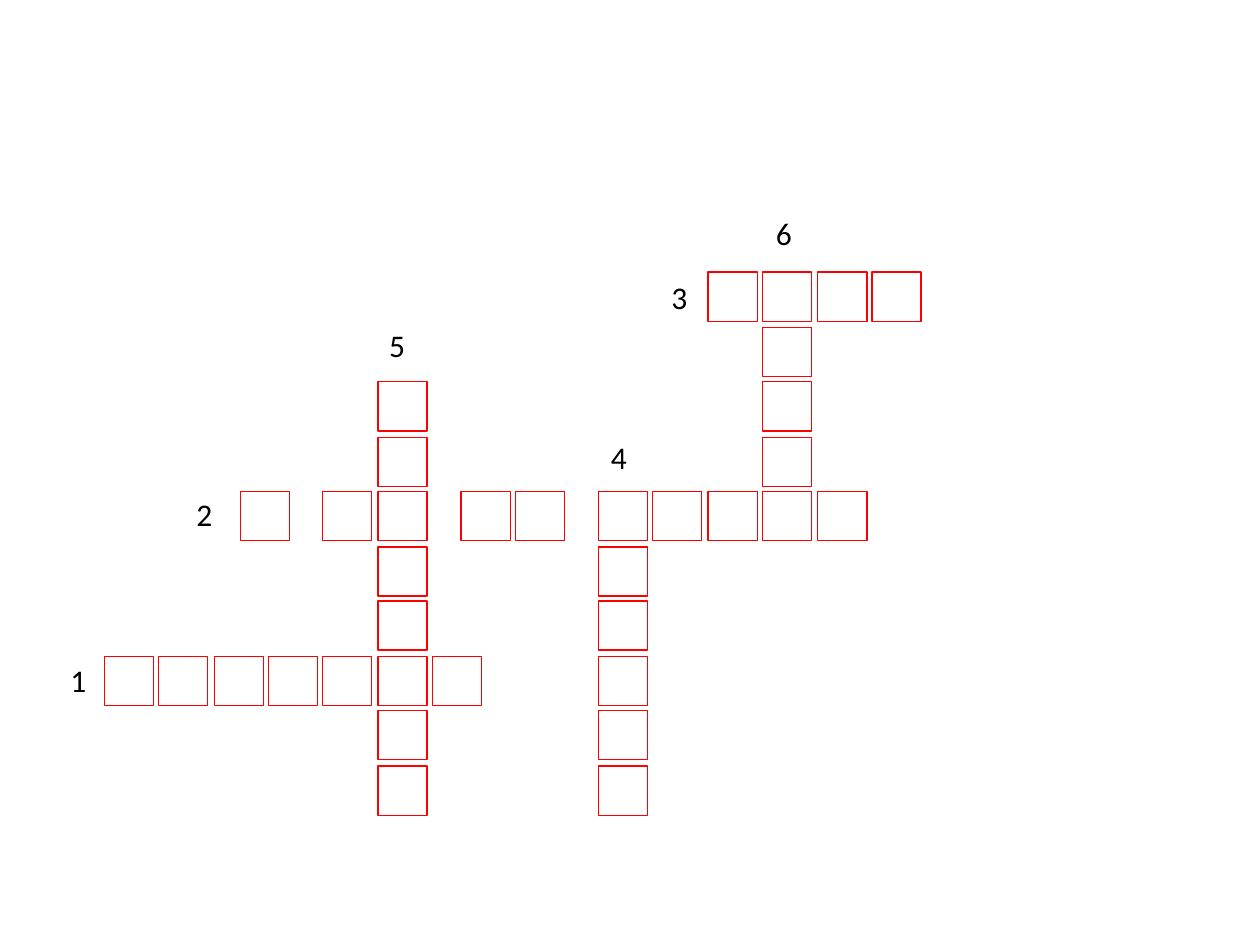
from itertools import product

from pptx import Presentation
from pptx.dml.color import RGBColor
from pptx.enum.shapes import MSO_SHAPE
from pptx.enum.text import MSO_AUTO_SIZE
from pptx.util import Inches, Pt

CELL = 0.39


def color(value):
    return RGBColor.from_string(value)


def spread(first, last, count):
    """Return evenly spaced positions from first to last."""
    step = (last - first) / (count - 1)
    return [round(first + i * step, 2) for i in range(count)]


class Crossword:
    font = "Calibri"
    size = 18
    ink = "000000"
    border = "FF0000"

    def __init__(self, slide):
        self.slide = slide

    def cell(self, x, y):
        sp = self.slide.shapes.add_shape(
            MSO_SHAPE.RECTANGLE, Inches(x), Inches(y), Inches(CELL), Inches(CELL))
        sp.shadow.inherit = False
        sp.fill.background()
        sp.line.color.rgb = color(self.border)
        sp.line.width = Pt(0.75)

    def number(self, text, x, y):
        box = self.slide.shapes.add_textbox(
            Inches(x), Inches(y), Inches(CELL), Inches(0.4))
        tf = box.text_frame
        tf.word_wrap = True
        tf.auto_size = MSO_AUTO_SIZE.SHAPE_TO_FIT_TEXT
        r = tf.paragraphs[0].add_run()
        r.text = text
        r.font.name = self.font
        r.font.size = Pt(self.size)
        r.font.color.rgb = color(self.ink)


def main():
    prs = Presentation()
    prs.slide_width, prs.slide_height = Inches(10), Inches(7.5)
    puzzle = Crossword(prs.slides.add_slide(prs.slide_layouts[6]))

    rows = spread(2.16, 6.08, 10)
    left = spread(0.83, 3.43, 7)
    right = spread(4.75, 6.92, 6)

    # Each word is a set of columns crossed with a set of rows.
    words = [
        (left, rows[7:8]),
        ([1.91, *left[4:6], 3.66, 4.09, *right[:5]], rows[4:5]),
        (right[2:], rows[:1]),
        (right[:1], rows[4:]),
        (left[5:6], rows[2:]),
        (right[3:4], rows[:5]),
    ]
    cells = {cell for columns, lines in words for cell in product(columns, lines)}
    for x, y in sorted(cells):
        puzzle.cell(x, y)

    numbers = [(0.46, 5.2), (1.46, 3.88), (5.23, 2.16),
               (4.75, 3.43), (2.99, 2.54), (6.06, 1.65)]
    for i, (x, y) in enumerate(numbers, start=1):
        puzzle.number(str(i), x, y)

    prs.save("out.pptx")


if __name__ == "__main__":
    main()
